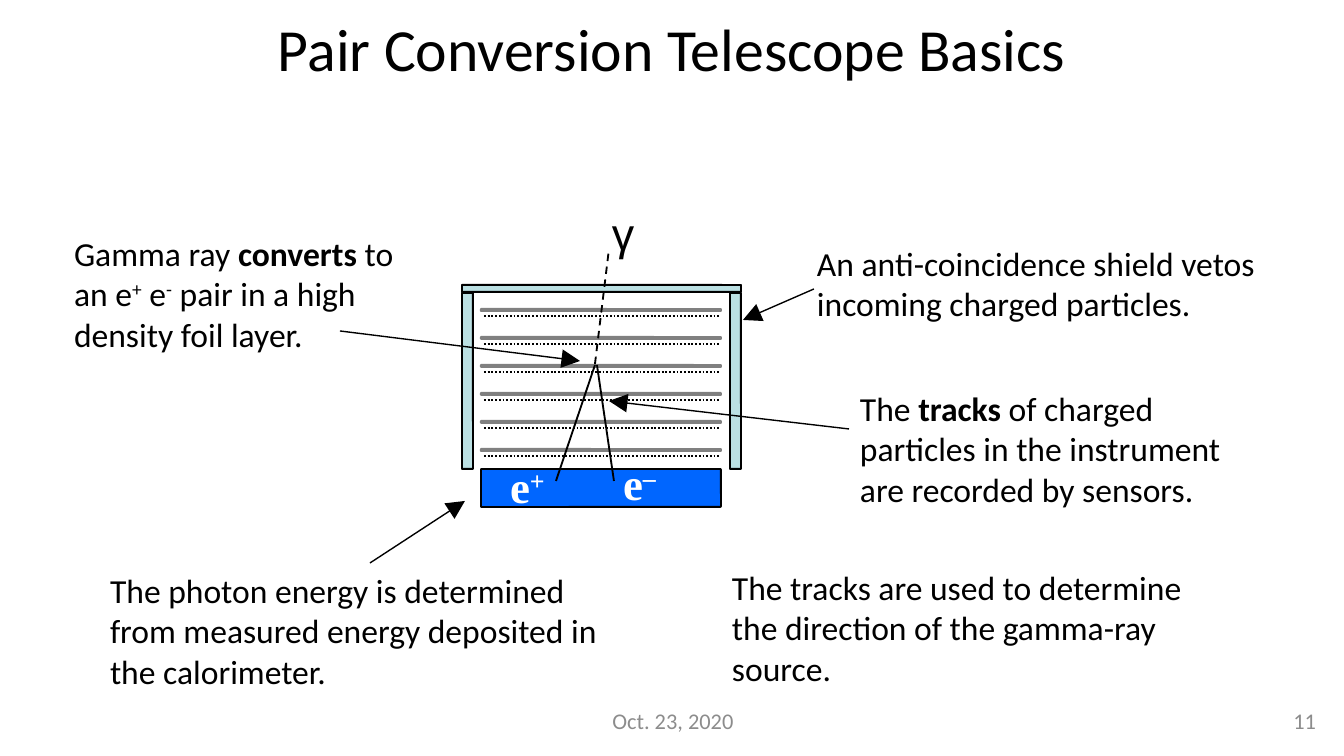
from lxml import etree
from pptx import Presentation
from pptx import util as u
from pptx.dml.color import RGBColor
from pptx.enum import dml, shapes, text
from pptx.oxml.ns import qn

PX = 9144000 / 1344
COLORS = {"ink": "000000", "foil": "808080", "calor": "0066FF",
          "shield": "BBE0E3", "white": "FFFFFF", "muted": "8C8C8C"}
DASH = dml.MSO_LINE


def px(*nums):
    return [u.Emu(round(n * PX)) for n in nums]


def rgb(name):
    return RGBColor.from_string(COLORS[name])


def style(par, size, face="Calibri", color="ink", align=None):
    par.font.size = u.Pt(size)
    par.font.name = face
    par.font.color.rgb = rgb(color)
    par.alignment = align


def label(slide, box, pars, size=18, wrap=True, inset=(0, 0), bold=None,
          anchor=text.MSO_ANCHOR.TOP, **look):
    """Place paragraphs of runs; a run is (words, mark), mark "b" or "sup"."""
    frame = slide.shapes.add_textbox(*px(*box)).text_frame
    frame.word_wrap = wrap
    frame.vertical_anchor = anchor
    frame.margin_left = frame.margin_right = px(inset[0])[0]
    frame.margin_top = frame.margin_bottom = px(inset[1])[0]
    for i, runs in enumerate(pars):
        par = frame.add_paragraph() if i else frame.paragraphs[0]
        style(par, size, **look)
        par.font.bold = bold
        for words, mark in runs:
            run = par.add_run()
            run.text = words
            if mark == "b":
                run.font.bold = True
            elif mark == "sup":
                run._r.get_or_add_rPr().set("baseline", "30000")


def line(slide, start, end, width=1, dash=None, arrow=False):
    link = slide.shapes.add_connector(
        shapes.MSO_CONNECTOR.STRAIGHT, *px(*start, *end))
    link.line.color.rgb = rgb("ink")
    link.line.width = u.Pt(width)
    if dash:
        link.line.dash_style = dash
    props = link._element.spPr
    if arrow:
        etree.SubElement(link.line._get_or_add_ln(), qn("a:tailEnd"),
                         type="triangle", w="lg", len="lg")
    etree.SubElement(props, qn("a:effectLst"))


def bar(slide, box, fill=None, edge="ink"):
    shape = slide.shapes.add_shape(
        shapes.MSO_SHAPE.ROUNDED_RECTANGLE, *px(*box))
    shape.adjustments[0] = 0.02
    shape.shadow.inherit = False
    if fill:
        shape.fill.solid()
        shape.fill.fore_color.rgb = rgb(fill)
    else:
        shape.fill.background()
    shape.line.color.rgb = rgb(edge)
    shape.line.width = u.Pt(1)


def heading(slide, box):
    title = slide.shapes.title
    title.left, title.top, title.width, title.height = px(*box)
    frame = title.text_frame
    frame.text = "Pair Conversion Telescope Basics"
    frame.auto_size = text.MSO_AUTO_SIZE.NONE
    frame.vertical_anchor = text.MSO_ANCHOR.TOP
    style(frame.paragraphs[0], 32, align=text.PP_ALIGN.CENTER)


def scope(slide, left, top):
    """Draw the detector: foils, sensors, shield, calorimeter and tracks."""
    def at(x, y):
        return left + x, top + y

    label(slide, (*at(137, -86), 46, 67), [[("γ", None)]], 24, wrap=False,
          inset=(13, 7), face="Arial")
    pitch = 28
    for i in range(6):
        bar(slide, (*at(19, 24 + i * pitch), 240, 2), edge="foil")
    bar(slide, (*at(19, 184), 240, 38), "calor")
    for x in (268, 0):
        bar(slide, (*at(x, 8), 11, 176), "shield")
    bar(slide, (*at(0, 0), 279, 7), "shield")
    for i in range(6):
        y = 31 + i * pitch
        line(slide, at(22, y), at(257, y), dash=DASH.ROUND_DOT)
    line(slide, at(133, 80), at(94, 196))
    line(slide, at(135, 80), at(152, 196))
    line(slide, at(133, 79), at(147, -36), dash=DASH.DASH)
    for x, y, sign in ((35, 167, "+"), (148, 164, "–")):
        label(slide, (*at(x, y), 70, 67), [[("e", None), (sign, "sup")]], 24,
              inset=(13, 7), bold=True, face="Times New Roman", color="white")


def notes(slide):
    """Place the explanations and the arrows into the detector."""
    label(slide, (110, 570, 504, 122), [[
        ("The photon energy is determined from measured energy deposited "
         "in the calorimeter.", None)]])
    label(slide, (74, 233, 333, 122), [
        [("Gamma ray ", None), ("converts", "b"), (" to", None)],
        [("an e", None), ("+", "sup"), (" e", None), ("-", "sup"),
         (" pair in a high density foil layer.", None)]])
    label(slide, (860, 388, 407, 122), [
        [("The ", None), ("tracks ", "b"), ("of charged", None)],
        [("particles in the instrument are recorded by sensors.", None)]])
    label(slide, (817, 243, 444, 82), [
        [("An anti-coincidence shield vetos", None)],
        [("incoming charged particles.", None)]], wrap=False)
    label(slide, (719, 560, 481, 176), [[
        ("The tracks are used to determine the direction of the gamma-ray "
         "source.", None)]], inset=(13, 7))
    for start, end in (((340, 331), (580, 361)), ((814, 289), (743, 320)),
                       ((849, 429), (609, 401)), ((370, 563), (465, 501))):
        line(slide, start, end, 0.75, arrow=True)


def footer(slide, top, high):
    for left, wide, words, align in (
            (460, 426, "Oct. 23, 2020", text.PP_ALIGN.CENTER),
            (1016, 313, "11", text.PP_ALIGN.RIGHT)):
        label(slide, (left, top, wide, high), [[(words, None)]], 12,
              inset=(13, 7), anchor=text.MSO_ANCHOR.MIDDLE, color="muted",
              align=align)


def main():
    deck = Presentation()
    deck.slide_width, deck.slide_height = px(1344, 756)
    slide = deck.slides.add_slide(deck.slide_layouts[5])
    heading(slide, (67, 5, 1210, 127))
    scope(slide, 462, 285)
    notes(slide)
    footer(slide, 701, 40)
    deck.save("out.pptx")


if __name__ == "__main__":
    main()
